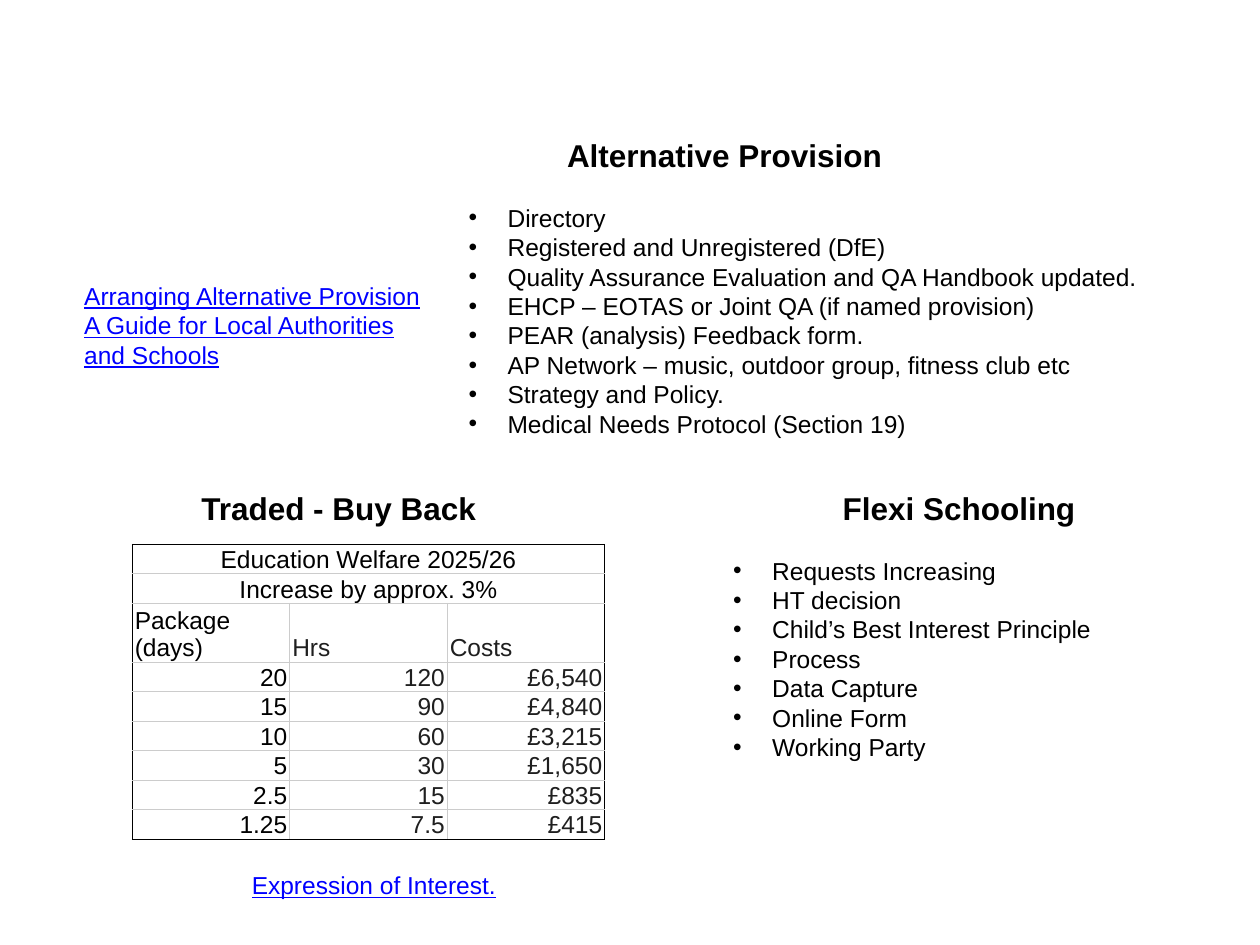
from lxml.etree import SubElement
from pptx import Presentation
from pptx.dml.color import RGBColor
from pptx.enum.text import MSO_ANCHOR, MSO_AUTO_SIZE, PP_ALIGN
from pptx.oxml.ns import qn
from pptx.util import Inches, Pt

BLACK, DARK, GREY, WHITE, BLUE = "000000", "1F1F1F", "CCCCCC", "FFFFFF", "0000FF"


def color(hex_text):
    return RGBColor.from_string(hex_text)


def add_edge(tc_pr, side, hex_text):
    """Draw one border of a table cell."""
    ln = SubElement(tc_pr, qn(f"a:ln{side}"), w=str(Pt(0.5)))
    fill = SubElement(ln, qn("a:solidFill"))
    SubElement(fill, qn("a:srgbClr"), val=hex_text)


class SlideBuilder:
    font, heading_size, body_size = "Arial", 18, 14

    def __init__(self, prs):
        self.s = prs.slides.add_slide(prs.slide_layouts[5])

    def style(self, p, size=body_size, hex_text=BLACK, bold=False, underline=False):
        for r in p.runs:
            f = r.font
            f.name, f.size, f.bold, f.underline = self.font, Pt(size), bold, underline
            f.color.rgb = color(hex_text)

    def place(self, sp, box, lines):
        sp.left, sp.top, sp.width, sp.height = map(Inches, box)
        tf = sp.text_frame
        tf.text = "\n".join(lines)
        tf.word_wrap = True
        tf.auto_size = MSO_AUTO_SIZE.SHAPE_TO_FIT_TEXT
        tf.vertical_anchor = MSO_ANCHOR.TOP
        return tf.paragraphs

    def text_box(self, box, lines):
        return self.place(self.s.shapes.add_textbox(0, 0, 0, 0), box, lines)

    def title(self, box, text):
        p = self.place(self.s.shapes.title, box, [text])[0]
        p.alignment = PP_ALIGN.LEFT
        self.style(p, self.heading_size, bold=True)

    def heading(self, box, text):
        self.style(self.text_box(box, [text])[0], self.heading_size, bold=True)

    def link_text(self, box, lines):
        for p in self.text_box(box, lines):
            self.style(p, hex_text=BLUE, underline=True)

    def bullets(self, box, lines):
        for p in self.text_box(box, lines):
            p_pr = p._p.get_or_add_pPr()
            indent = Inches(0.31)
            p_pr.set("marL", str(indent))
            p_pr.set("indent", str(-indent))
            SubElement(p_pr, qn("a:buFont"), typeface=self.font)
            SubElement(p_pr, qn("a:buChar"), char="•")
            self.style(p)

    def price_table(self, left, top, col_width, row_height, banners, header, rows):
        """Table with full-width banner rows, a header row and figures."""
        data = [[b] for b in banners] + [header] + rows
        n_rows, n_cols = len(data), len(header)
        frame = self.s.shapes.add_table(
            n_rows, n_cols, Inches(left), Inches(top),
            Inches(col_width * n_cols), Inches(row_height * (n_rows + 1)))
        table = frame.table
        table.first_row = table.horz_banding = False
        for col in table.columns:
            col.width = Inches(col_width)
        for i, values in enumerate(data):
            lines = 2 if values is header else 1
            table.rows[i].height = Inches(row_height * lines)
            if len(values) == 1:
                table.cell(i, 0).merge(table.cell(i, n_cols - 1))
                align = PP_ALIGN.CENTER
            else:
                align = PP_ALIGN.LEFT if values is header else PP_ALIGN.RIGHT
            for j, value in enumerate(values):
                cell = table.cell(i, j)
                outer = {"L": j == 0, "R": j == len(values) - 1,
                         "T": i == 0, "B": i == n_rows - 1}
                self.fill_cell(cell, value, align, DARK if j else BLACK, outer)

    def fill_cell(self, cell, value, align, hex_text, outer):
        cell.text = value
        cell.margin_left = cell.margin_right = Inches(0.02)
        cell.margin_top = cell.margin_bottom = 0
        cell.vertical_anchor = MSO_ANCHOR.BOTTOM
        p = cell.text_frame.paragraphs[0]
        p.alignment = align
        self.style(p, hex_text=hex_text)
        for side, is_outer in outer.items():
            add_edge(cell._tc.get_or_add_tcPr(), side, BLACK if is_outer else GREY)
        cell.fill.solid()
        cell.fill.fore_color.rgb = color(WHITE)


def main():
    prs = Presentation()
    prs.slide_width, prs.slide_height = Inches(10), Inches(7.5)
    slide = SlideBuilder(prs)

    slide.title((4.4, 1.03, 4.19, 0.4), "Alternative Provision")
    slide.bullets((3.62, 1.56, 5.91, 2.22), [
        "Directory",
        "Registered and Unregistered (DfE)",
        "Quality Assurance Evaluation and QA Handbook updated.",
        "EHCP – EOTAS or Joint QA (if named provision)",
        "PEAR (analysis) Feedback form.",
        "AP Network – music, outdoor group, fitness club etc",
        "Strategy and Policy.",
        "Medical Needs Protocol (Section 19)",
    ])
    slide.link_text((0.57, 2.18, 2.89, 0.81), [
        "Arranging Alternative Provision",
        "A Guide for Local Authorities and Schools",
    ])

    slide.heading((1.5, 3.83, 3.3, 0.4), "Traded - Buy Back")
    slide.price_table(
        1.05, 4.32, 1.25, 0.23,
        banners=["Education Welfare 2025/26", "Increase by approx. 3%"],
        header=["Package (days)", "Hrs", "Costs"],
        rows=[
            ["20", "120", "£6,540"],
            ["15", "90", "£4,840"],
            ["10", "60", "£3,215"],
            ["5", "30", "£1,650"],
            ["2.5", "15", "£835"],
            ["1.25", "7.5", "£415"],
        ])
    slide.link_text((1.9, 6.86, 2.5, 0.34), ["Expression of Interest."])

    slide.heading((6.59, 3.83, 2.76, 0.4), "Flexi Schooling")
    slide.bullets((5.72, 4.36, 3.95, 1.75), [
        "Requests Increasing",
        "HT decision",
        "Child’s Best Interest Principle",
        "Process",
        "Data Capture",
        "Online Form",
        "Working Party",
    ])
    prs.save("out.pptx")


if __name__ == "__main__":
    main()
